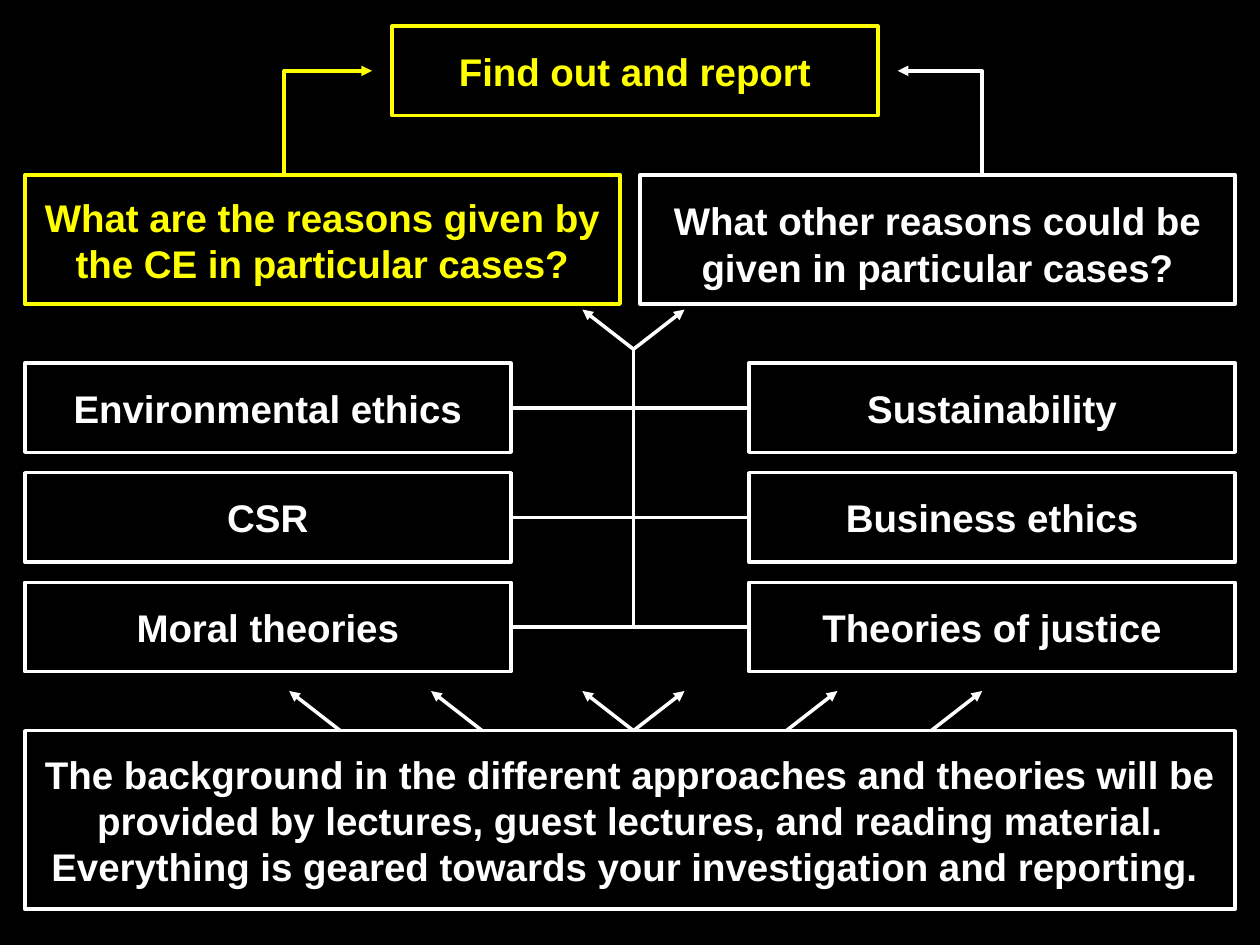
from lxml.etree import SubElement
from pptx import Presentation
from pptx.dml.color import RGBColor
from pptx.enum.shapes import MSO_CONNECTOR, MSO_SHAPE
from pptx.enum.text import MSO_ANCHOR, PP_ALIGN
from pptx.oxml.ns import qn
from pptx.util import Cm, Pt

COLORS = {"background": "000000", "plain": "FFFFFF", "focus": "FFFF00"}
MARGIN, FULL_WIDTH = 0.5, 24.4
SPINE_X = 12.77
THEORY_WIDTH, THEORY_HEIGHT, THEORY_PITCH = 9.8, 1.8, 2.21


def add_box(slide, box, paragraphs, color="plain", top_inset=0.13):
    left, top, width, height = box
    panel = slide.shapes.add_shape(
        MSO_SHAPE.RECTANGLE, Cm(left), Cm(top), Cm(width), Cm(height))
    panel.shadow.inherit = False
    panel.fill.background()
    panel.line.color.rgb = RGBColor.from_string(COLORS[color])
    panel.line.width = Pt(2)
    frame = panel.text_frame
    frame.word_wrap = True
    frame.vertical_anchor = MSO_ANCHOR.MIDDLE
    frame.margin_top = Cm(top_inset)
    for index, wording in enumerate(paragraphs):
        paragraph = frame.add_paragraph() if index else frame.paragraphs[0]
        paragraph.alignment = PP_ALIGN.CENTER
        run = paragraph.add_run()
        run.text = wording
        run.font.name = "Arial"
        run.font.size = Pt(22)
        run.font.bold = True
        run.font.color.rgb = RGBColor.from_string(COLORS[color])
    return panel


def add_link(slide, start, end, color="plain", kind=MSO_CONNECTOR.STRAIGHT,
             arrow=False, width=2):
    link = slide.shapes.add_connector(
        kind, *(Cm(length) for length in (*start, *end)))
    link.line.color.rgb = RGBColor.from_string(COLORS[color])
    link.line.width = Pt(width)
    if arrow:
        SubElement(link.line._get_or_add_ln(), qn("a:tailEnd"), type="triangle")
    SubElement(link._element.spPr, qn("a:effectLst"))
    return link


def add_report(slide, box):
    left, top, width, height = box
    add_box(slide, box, ["Find out and report"], "focus")
    arrow_y = top + height / 2
    for start_x, end_x, bend, color in (
        (left + width + 3.79, left + width + 0.41, 0.5, "plain"),
        (left + 3, left - 0.41, 1.52, "focus"),
    ):
        elbow = add_link(slide, (start_x, top + 3), (end_x, arrow_y), color,
                         MSO_CONNECTOR.ELBOW, arrow=True)
        elbow.adjustments[0] = bend if hasattr(elbow, "adjustments") else None


def add_elbow(slide, start, end, bend, color):
    elbow = add_link(slide, start, end, color, MSO_CONNECTOR.ELBOW, arrow=True)
    geometry = elbow._element.spPr.find(qn("a:prstGeom"))
    guides = geometry.find(qn("a:avLst"))
    if guides is None:
        guides = SubElement(geometry, qn("a:avLst"))
    SubElement(guides, qn("a:gd"), name="adj1", fmla=f"val {round(bend * 100000)}")


def add_report(slide, box):
    left, top, width, height = box
    add_box(slide, box, ["Find out and report"], "focus")
    for start_x, end_x, bend, color in (
        (left + width + 3.8, left + width + 0.4, 0.5, "plain"),
        (left + 3, left - 0.4, 1.52, "focus"),
    ):
        add_elbow(slide, (start_x, top + 3), (end_x, top + height / 2), bend, color)


def add_questions(slide, box):
    left, top, width, height = box
    question_width = 12
    add_box(slide, (left, top, question_width, height),
            ["What are the reasons given by the CE in particular cases?"], "focus")
    add_box(slide, (left + width - question_width, top, question_width, height),
            ["What other reasons could be given in particular cases?"],
            top_inset=0.29)


def add_arrow(slide, x, y, side):
    add_link(slide, (x, y), (x + side * 1.03, y - 0.8), arrow=True)


def add_theories(slide, box):
    left, top, width, height = box
    right = left + width - THEORY_WIDTH
    rows = (
        ("Environmental ethics", "Sustainability"),
        ("CSR", "Business ethics"),
        ("Moral theories", "Theories of justice"),
    )
    for row, names in enumerate(rows):
        row_top = top + row * THEORY_PITCH
        middle = row_top + THEORY_HEIGHT / 2
        for name, x, edge, site in zip(
                names, (left, right), (left + THEORY_WIDTH, right), (3, 1)):
            theory = add_box(
                slide, (x, row_top, THEORY_WIDTH, THEORY_HEIGHT), [name])
            branch = add_link(slide, (edge, middle), (SPINE_X, middle))
            branch.begin_connect(theory, site)
    spine_top = top - 0.28
    add_link(slide, (SPINE_X, spine_top),
             (SPINE_X, top + height - THEORY_HEIGHT / 2), width=2.25)
    for side in (-1, 1):
        add_arrow(slide, SPINE_X, spine_top, side)


def add_background(slide, box):
    add_box(slide, box, [
        "The background in the different approaches and theories will be "
        "provided by lectures, guest lectures, and reading material.",
        "Everything is geared towards your investigation and reporting. ",
    ])
    for side, starts in ((-1, (6.86, 9.72, SPINE_X)), (1, (SPINE_X, 15.85, 18.77))):
        for x in starts:
            add_arrow(slide, x, box[1], side)


def main():
    deck = Presentation()
    deck.slide_width, deck.slide_height = Cm(25.4), Cm(19.05)
    slide = deck.slides.add_slide(deck.slide_layouts[6])
    slide.background.fill.solid()
    slide.background.fill.fore_color.rgb = RGBColor.from_string(COLORS["background"])
    add_report(slide, (7.9, 0.53, THEORY_WIDTH, THEORY_HEIGHT))
    add_questions(slide, (MARGIN, 3.53, FULL_WIDTH, 2.6))
    add_theories(slide, (MARGIN, 7.32, FULL_WIDTH, 2 * THEORY_PITCH + THEORY_HEIGHT))
    add_background(slide, (MARGIN, 14.73, FULL_WIDTH, 3.6))
    deck.save("out.pptx")


if __name__ == "__main__":
    main()
